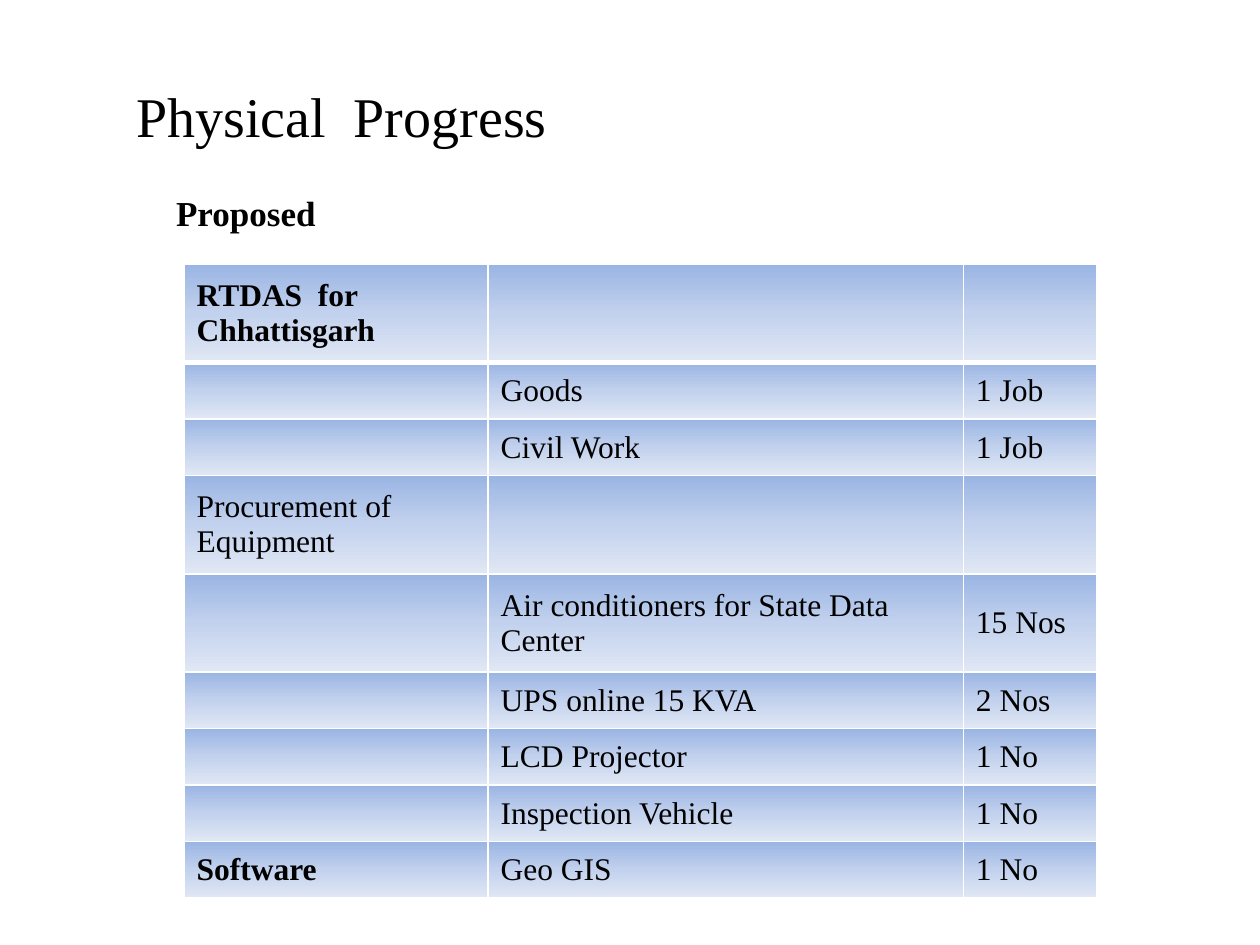
"""Build the physical progress slide with its table of proposed items."""
from pptx import Presentation
from pptx import util as u
from pptx.dml.color import RGBColor
from pptx.enum import text
from pptx.oxml import parse_xml
from pptx.oxml.ns import nsdecls

FONT = "Times New Roman"
BLACK, WHITE = "000000", "FFFFFF"
GRADIENT = [(0, "9AB5E4"), (50, "C2D1ED"), (100, "E1E8F5")]
TITLE = "Physical  Progress"
SUBTITLE = "Proposed"
ROWS = [
    ("RTDAS  for Chhattisgarh", "", ""),
    ("", "Goods", "1 Job"),
    ("", "Civil Work", "1 Job"),
    ("Procurement of Equipment", "", ""),
    ("", "Air conditioners for State Data Center", "15 Nos"),
    ("", "UPS online 15 KVA", "2 Nos"),
    ("", "LCD Projector", "1 No"),
    ("", "Inspection Vehicle", "1 No"),
    ("Software", "Geo GIS", "1 No"),
]
BOLD = {ROWS[0][0], "Software"}
COL_WIDTHS = [6.13, 9.58, 2.68]
SINGLE, DOUBLE = 1.14, 1.98
TWO_LINE_ROWS = {0, 3, 4}


def color(value):
    return RGBColor.from_string(value)


def style(p, size, bold=False):
    f = p.font
    f.name, f.size, f.bold = FONT, u.Pt(size), bold
    f.color.rgb = color(BLACK)
    p.alignment = text.PP_ALIGN.LEFT


def write(sp, words, size, bold=False):
    tf = sp.text_frame
    tf.text = words
    tf.word_wrap = True
    tf.auto_size = text.MSO_AUTO_SIZE.SHAPE_TO_FIT_TEXT
    tf.vertical_anchor = text.MSO_ANCHOR.TOP
    style(tf.paragraphs[0], size, bold)


def paint(cell, bottom):
    tc_pr = cell._tc.get_or_add_tcPr()
    for side, width in (("L", 1), ("R", 1), ("T", 1), ("B", bottom)):
        tc_pr.append(parse_xml(
            f'<a:ln{side} {nsdecls("a")} w="{u.Pt(width)}"><a:solidFill>'
            f'<a:srgbClr val="{WHITE}"/></a:solidFill></a:ln{side}>'))
    stops = "".join(f'<a:gs pos="{pos * 1000}"><a:srgbClr val="{c}"/></a:gs>'
                    for pos, c in GRADIENT)
    tc_pr.append(parse_xml(
        f'<a:gradFill {nsdecls("a")} rotWithShape="1"><a:gsLst>{stops}</a:gsLst>'
        '<a:lin ang="5400000" scaled="0"/></a:gradFill>'))


def add_items(s):
    heights = [DOUBLE if i in TWO_LINE_ROWS else SINGLE for i in range(len(ROWS))]
    table = s.shapes.add_table(
        len(ROWS), len(COL_WIDTHS), u.Cm(3.71), u.Cm(5.33),
        u.Cm(sum(COL_WIDTHS)), u.Cm(sum(heights))).table
    table.first_row = table.horz_banding = False
    for col, width in zip(table.columns, COL_WIDTHS):
        col.width = u.Cm(width)
    for i, (row, height, words) in enumerate(zip(table.rows, heights, ROWS)):
        row.height = u.Cm(height)
        for cell, word in zip(row.cells, words):
            cell.text = word
            cell.vertical_anchor = text.MSO_ANCHOR.MIDDLE
            style(cell.text_frame.paragraphs[0], 18, word in BOLD)
            paint(cell, 3 if i == 0 else 1)


def main():
    prs = Presentation()
    prs.slide_width, prs.slide_height = u.Cm(25.4), u.Cm(19.05)
    s = prs.slides.add_slide(prs.slide_layouts[5])
    title = s.shapes.title
    title.left, title.top = u.Cm(2.49), u.Cm(1.52)
    title.width, title.height = u.Cm(21), u.Cm(1.63)
    write(title, TITLE, 32)
    add_items(s)
    label = s.shapes.add_textbox(u.Cm(3.3), u.Cm(3.73), u.Cm(3.81), u.Cm(1.12))
    write(label, SUBTITLE, 20, True)
    prs.save("out.pptx")


if __name__ == "__main__":
    main()
